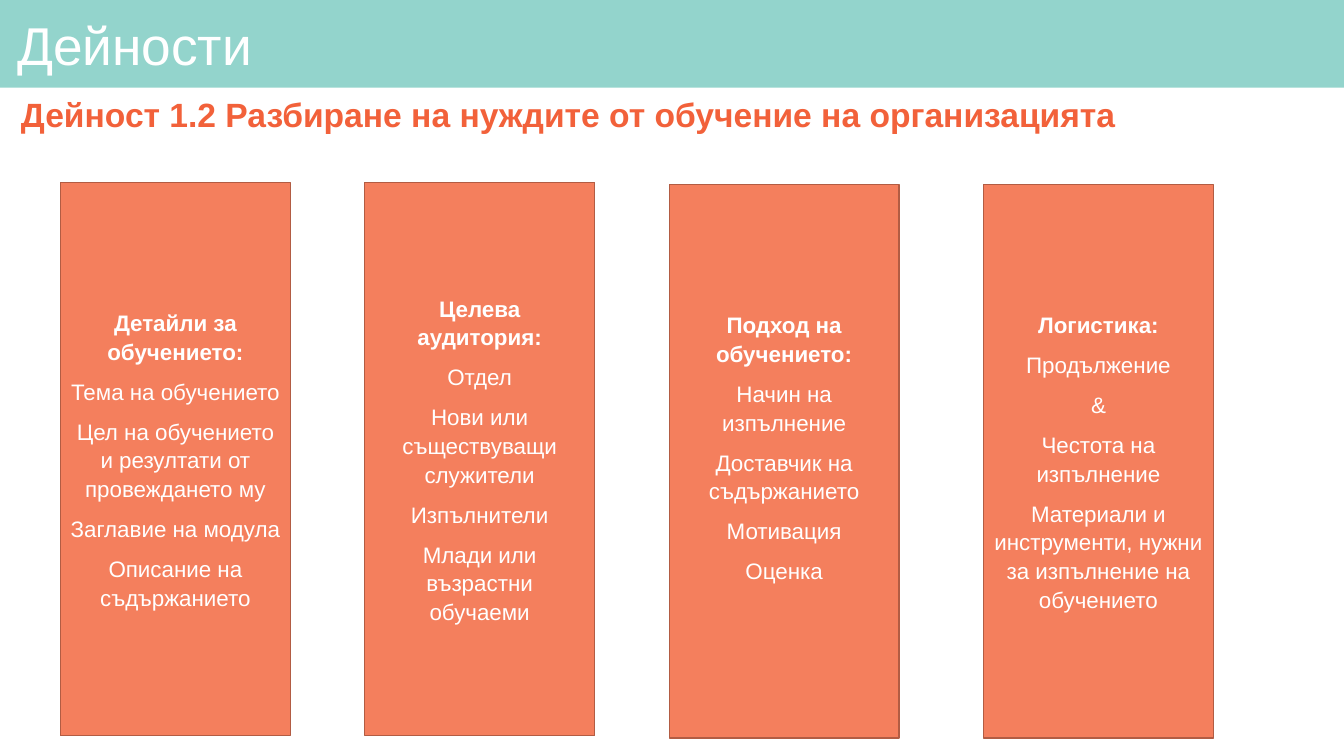
from dataclasses import dataclass

from pptx import Presentation
from pptx.dml.color import RGBColor
from pptx.enum.shapes import MSO_SHAPE
from pptx.enum.text import MSO_ANCHOR, PP_ALIGN
from pptx.util import Pt

RECTANGLE = MSO_SHAPE.RECTANGLE
PROCESS = MSO_SHAPE.FLOWCHART_PROCESS
MIDDLE = MSO_ANCHOR.MIDDLE
LEFT, CENTER = PP_ALIGN.LEFT, PP_ALIGN.CENTER

FONT = "Arial"
WHITE, TEAL, ORANGE = "FFFFFF", "93D4CC", "F2613A"
CARD_FILL, CARD_LINE = "F47F5D", "B25C43"
SLIDE_WIDTH, SLIDE_HEIGHT = 960, 540
CARD_WIDTH, CARD_HEIGHT = 164.2, 395.3


@dataclass
class Card:
    left: float
    top: float
    heading: str
    items: list[str]
    bottom_inset: float = 3.6


CARDS = [
    Card(43.2, 130.2, "Детайли за обучението:", [
        "Тема на обучението",
        "Цел на обучението и резултати от провеждането му",
        "Заглавие на модула",
        "Описание на съдържанието",
    ]),
    Card(260.5, 130.2, "Целева аудитория:", [
        "Отдел",
        "Нови или съществуващи служители",
        "Изпълнители",
        "Млади или възрастни обучаеми",
    ]),
    Card(478, 131.8, "Подход на обучението:", [
        "Начин на изпълнение",
        "Доставчик на съдържанието",
        "Мотивация",
        "Оценка",
    ], bottom_inset=24),
    Card(702.5, 131.8, "Логистика:", [
        "Продължение",
        "&",
        "Честота на изпълнение",
        "Материали и инструменти, нужни за изпълнение на обучениетo",
    ]),
]


def color(value: str) -> RGBColor:
    return RGBColor.from_string(value)


def format_paragraph(paragraph, size: float, font_color: str, bold: bool,
                     alignment, line_spacing: float) -> None:
    paragraph.alignment = alignment
    paragraph.line_spacing = line_spacing
    for run in paragraph.runs:
        run.font.name = FONT
        run.font.size = Pt(size)
        run.font.bold = bold
        run.font.color.rgb = color(font_color)


def set_frame(text_frame, side: float, top: float, bottom: float) -> None:
    text_frame.word_wrap = True
    text_frame.vertical_anchor = MIDDLE
    text_frame.margin_left = text_frame.margin_right = Pt(side)
    text_frame.margin_top = Pt(top)
    text_frame.margin_bottom = Pt(bottom)


def add_box(slide, kind, left: float, top: float, width: float, height: float,
            fill: str):
    shape = slide.shapes.add_shape(kind, Pt(left), Pt(top), Pt(width), Pt(height))
    shape.shadow.inherit = False
    shape.fill.solid()
    shape.fill.fore_color.rgb = color(fill)
    shape.line.fill.background()
    return shape


def add_heading(slide, text: str, top: float, height: float, inset: float,
                size: float, font_color: str, bold: bool) -> None:
    shape = slide.shapes.add_textbox(Pt(7.9), Pt(top), Pt(940), Pt(height))
    set_frame(shape.text_frame, inset, 3.6, 3.6)
    shape.text_frame.text = text
    format_paragraph(shape.text_frame.paragraphs[0], size, font_color, bold, LEFT, 0.9)


def add_card(slide, card: Card) -> None:
    shape = add_box(slide, PROCESS, card.left, card.top, CARD_WIDTH, CARD_HEIGHT,
                    CARD_FILL)
    shape.line.color.rgb = color(CARD_LINE)
    shape.line.width = Pt(1)
    text_frame = shape.text_frame
    set_frame(text_frame, 7.2, 3.6, card.bottom_inset)
    text_frame.text = "\n".join([card.heading, *card.items])
    for index, paragraph in enumerate(text_frame.paragraphs):
        format_paragraph(paragraph, 16, WHITE, index == 0, CENTER, 1.07)
        if index:
            paragraph.space_before = Pt(8)


def main() -> None:
    presentation = Presentation()
    presentation.slide_width = Pt(SLIDE_WIDTH)
    presentation.slide_height = Pt(SLIDE_HEIGHT)
    slide = presentation.slides.add_slide(presentation.slide_layouts[6])

    # Title band and headings
    add_box(slide, RECTANGLE, 0, 0, SLIDE_WIDTH, 62.6, TEAL)
    add_heading(slide, "Дейности", 6.5, 56, 4.3, 38, WHITE, False)
    add_heading(slide, "Дейност 1.2 Разбиране на нуждите от обучение на организацията",
                65, 36, 7.2, 24, ORANGE, True)

    # Training needs cards
    for card in CARDS:
        add_card(slide, card)

    presentation.save("out.pptx")


if __name__ == "__main__":
    main()
